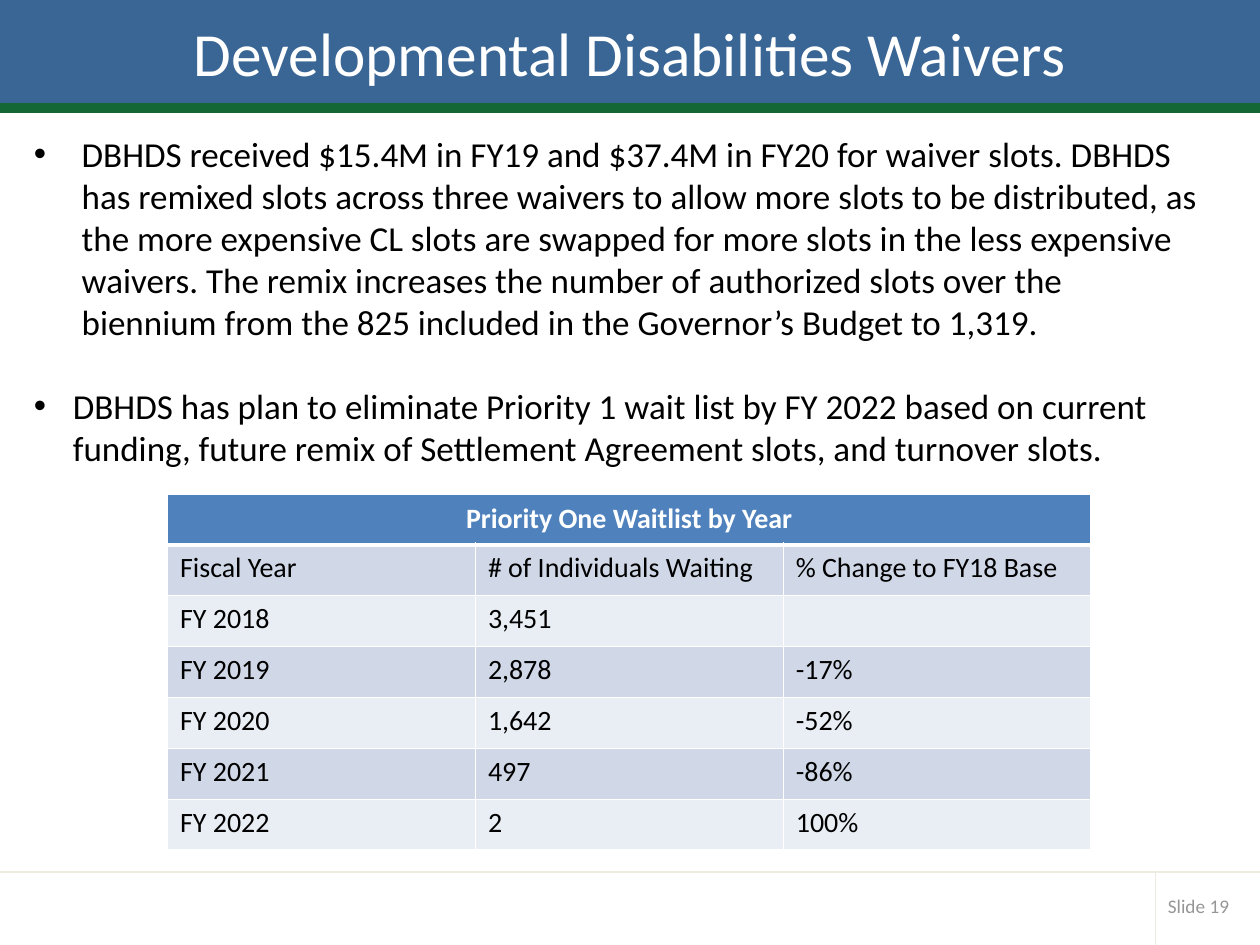
import pptx
import pptx.dml.color
import pptx.enum.shapes
import pptx.enum.text
import pptx.oxml.ns
import pptx.util
from lxml import etree

Inches = pptx.util.Inches
Pt = pptx.util.Pt
RGB = pptx.dml.color.RGBColor
ALIGN = pptx.enum.text.PP_ALIGN
ANCHOR = pptx.enum.text.MSO_ANCHOR
qn = pptx.oxml.ns.qn

FONT = "Calibri"
BLUE = RGB(0x3A, 0x66, 0x95)
GREEN = RGB(0x13, 0x67, 0x35)
RULE = RGB(0xEE, 0xEC, 0xE1)
GRAY = RGB(0x96, 0x96, 0x96)
BLACK = RGB(0, 0, 0)
WHITE = RGB(0xFF, 0xFF, 0xFF)
HEADER = RGB(0x4F, 0x81, 0xBD)
BANDS = [RGB(0xD0, 0xD8, 0xE8), RGB(0xE9, 0xED, 0xF4)]

BULLETS = [
    ("DBHDS received $15.4M in FY19 and $37.4M in FY20 for waiver slots. DBHDS "
     "has remixed slots across three waivers to allow more slots to be distributed, "
     "as the more expensive CL slots are swapped for more slots in the less expensive "
     "waivers. The remix increases the number of authorized slots over the biennium "
     "from the 825 included in the Governor’s Budget to 1,319.", 0.38, 0),
    ("DBHDS has plan to eliminate Priority 1 wait list by FY 2022 based on current "
     "funding, future remix of Settlement Agreement slots, and turnover slots.", 0.31, 24),
]
WAITLIST = [
    ("Priority One Waitlist by Year", "", ""),
    ("Fiscal Year", "# of Individuals Waiting", "% Change to FY18 Base"),
    ("FY 2018", "3,451", ""),
    ("FY 2019", "2,878", "-17%"),
    ("FY 2020", "1,642", "-52%"),
    ("FY 2021", "497", "-86%"),
    ("FY 2022", "2", "100%"),
]


def add_run(p, text, size, color, bold=False):
    r = p.add_run()
    r.text = text
    for name, value in {"name": FONT, "size": Pt(size), "bold": bold}.items():
        setattr(r.font, name, value)
    r.font.color.rgb = color


def add_bar(s, top, height, color):
    sp = s.shapes.add_shape(pptx.enum.shapes.MSO_SHAPE.RECTANGLE,
                            0, Inches(top), Inches(10), Inches(height))
    sp.shadow.inherit = False
    sp.fill.solid()
    sp.fill.fore_color.rgb = color
    sp.line.color.rgb = color
    sp.line.width = Pt(2)


def add_rule(s, *ends):
    line = s.shapes.add_connector(pptx.enum.shapes.MSO_CONNECTOR.STRAIGHT,
                                  *map(Inches, ends))
    line.line.color.rgb = RULE
    line.line.width = Pt(1)
    etree.SubElement(line._element.spPr, qn("a:effectLst"))


def add_box(s, box, anchor):
    tf = s.shapes.add_textbox(*map(Inches, box)).text_frame
    for name, value in {"word_wrap": True, "vertical_anchor": anchor}.items():
        setattr(tf, name, value)
    return tf


def add_label(s, text, box, size, color, align):
    p = add_box(s, box, ANCHOR.MIDDLE).paragraphs[0]
    p.alignment = align
    add_run(p, text, size, color)


def add_bullets(s, bullets, box):
    tf = add_box(s, box, ANCHOR.TOP)
    for i, (text, indent, before) in enumerate(bullets):
        p = tf.add_paragraph() if i else tf.paragraphs[0]
        p.space_before = Pt(before)
        pPr = p._p.get_or_add_pPr()
        pPr.set("marL", str(Inches(indent)))
        pPr.set("indent", str(-Inches(indent)))
        etree.SubElement(pPr, qn("a:buFont")).set("typeface", "Arial")
        etree.SubElement(pPr, qn("a:buChar")).set("char", "•")
        add_run(p, text, 20, BLACK)


def set_borders(cell, widths):
    tcPr = cell._tc.get_or_add_tcPr()
    for side, width in widths.items():
        ln = etree.SubElement(tcPr, qn(f"a:ln{side}"), w=str(Pt(width)))
        fill = etree.SubElement(ln, qn("a:solidFill"))
        etree.SubElement(fill, qn("a:srgbClr"), val=str(WHITE))


def add_waitlist(s, rows, left, top, width, height):
    table = s.shapes.add_table(len(rows), len(rows[0]), Inches(left), Inches(top),
                               Inches(width), Inches(height)).table
    for i, row in enumerate(rows):
        header = i == 0
        for j, text in enumerate(row):
            cell = table.cell(i, j)
            set_borders(cell, {"L": 1, "R": 1, "T": 3 if i == 1 else 1,
                               "B": 3 if header else 1})
            cell.fill.solid()
            cell.fill.fore_color.rgb = HEADER if header else BANDS[(i - 1) % 2]
            cell.vertical_anchor = ANCHOR.MIDDLE if header else ANCHOR.TOP
            p = cell.text_frame.paragraphs[0]
            p.alignment = ALIGN.CENTER if header else ALIGN.LEFT
            add_run(p, text, 16, WHITE if header else BLACK, header)
    table.cell(0, 0).merge(table.cell(0, len(rows[0]) - 1))


def main():
    prs = pptx.Presentation()
    prs.slide_width, prs.slide_height = Inches(10), Inches(7.5)
    s = prs.slides.add_slide(prs.slide_layouts[6])
    add_bar(s, 0, 0.83, BLUE)
    add_bar(s, 0.83, 0.05, GREEN)
    add_rule(s, 0, 6.92, 10, 6.92)
    add_rule(s, 9.17, 6.92, 9.17, 7.5)
    add_label(s, "Slide 19", (9.17, 7.04, 0.74, 0.29), 11, GRAY, ALIGN.LEFT)
    add_label(s, "Developmental Disabilities Waivers", (0, 0, 10, 0.83), 35, WHITE,
              ALIGN.CENTER)
    add_bullets(s, BULLETS, (0.17, 1, 9.5, 5.83))
    add_waitlist(s, WAITLIST, 1.33, 3.92, 7.33, 2.83)
    prs.save("out.pptx")


if __name__ == "__main__":
    main()
